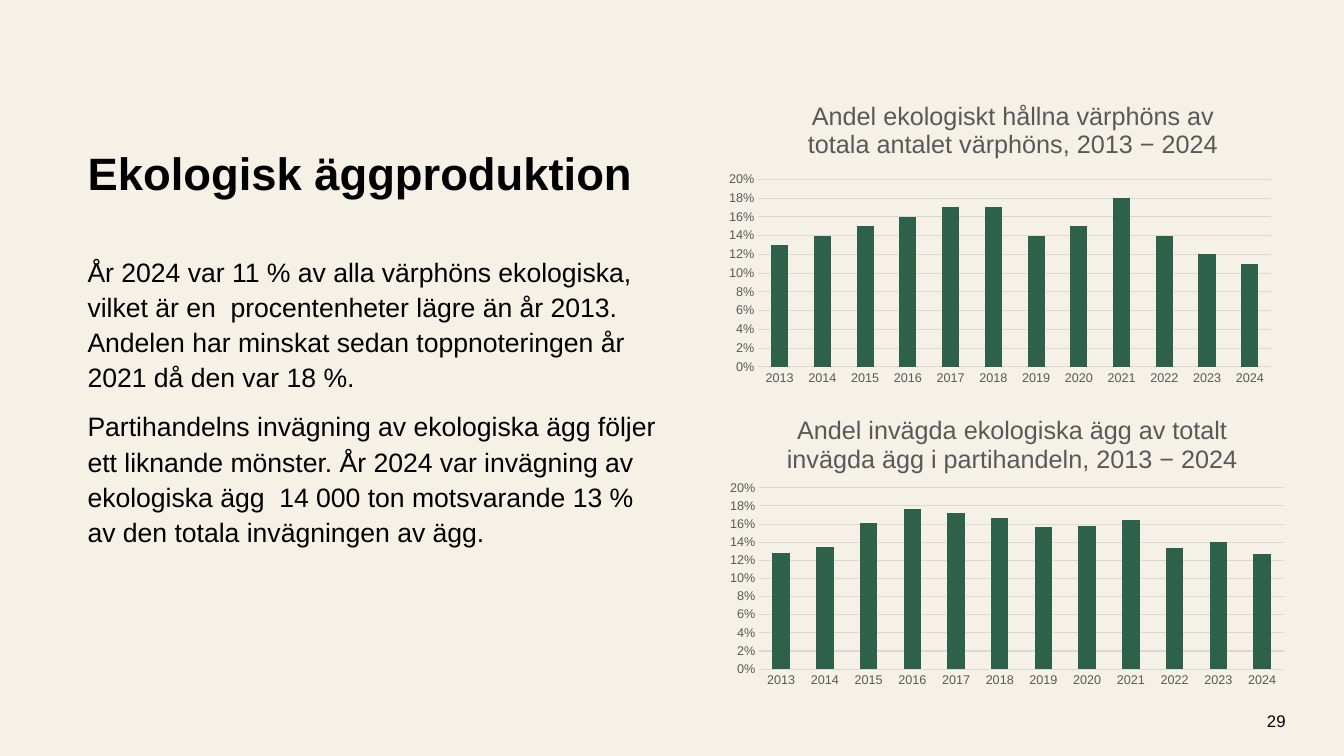
from dataclasses import dataclass

from lxml import etree
from pptx import Presentation
from pptx.chart.data import CategoryChartData
from pptx.dml.color import RGBColor
from pptx.enum import chart as ce, text as te
from pptx.util import Inches, Pt

INK, GREY, RULE, GREEN, SAND = "000000", "595959", "D9D9D9", "2E614C", "F5F1E7"
YEARS = [str(year) for year in range(2013, 2025)]


@dataclass
class Graph:
    title: str
    top: float
    width: float
    spot: dict[str, float]
    plot: dict[str, float]
    vals: list[float]


GRAPHS = [
    Graph("Andel ekologiskt hållna värphöns av totala antalet värphöns, 2013 − 2024",
          0.88, 5.59, dict(x=0.15, y=0.02), dict(x=0.07, y=0.3, w=0.91, h=0.62),
          [0.13, 0.14, 0.15, 0.16, 0.17, 0.17, 0.14, 0.15, 0.18, 0.14, 0.12, 0.11]),
    Graph("Andel invägda ekologiska ägg av totalt invägda ägg i partihandeln, 2013 − 2024",
          3.88, 5.72, dict(x=0.11, y=0.06), dict(x=0.07, y=0.32, w=0.91, h=0.6),
          [0.128, 0.135, 0.161, 0.177, 0.172, 0.167,
           0.157, 0.158, 0.165, 0.134, 0.14, 0.127]),
]

BODY = [
    "År 2024 var 11 % av alla värphöns ekologiska, vilket är en  procentenheter "
    "lägre än år 2013. Andelen har minskat sedan toppnoteringen år 2021 då den "
    "var 18 %.",
    "Partihandelns invägning av ekologiska ägg följer ett liknande mönster. "
    "År 2024 var invägning av ekologiska ägg  14 000 ton motsvarande 13 % av "
    "den totala invägningen av ägg.",
]


def color(code: str) -> RGBColor:
    return RGBColor.from_string(code)


def put(item, **vals) -> None:
    """Set each named value as an attribute of the item."""
    for name, val in vals.items():
        setattr(item, name, val)


def style(font, size: float, code: str, bold: bool = False) -> None:
    put(font, name="Arial", size=Pt(size), bold=bold)
    font.color.rgb = color(code)


def rule(line) -> None:
    line.color.rgb = color(RULE)
    line.width = Pt(0.75)


def place(shape, left: float, top: float, width: float, height: float) -> None:
    put(shape, left=Inches(left), top=Inches(top),
        width=Inches(width), height=Inches(height))


def write(shape, lines: list[str], size: float, anchor, bold: bool = False, **form) -> None:
    frame = shape.text_frame
    put(frame, word_wrap=True, auto_size=te.MSO_AUTO_SIZE.NONE, vertical_anchor=anchor)
    frame.text = "\n".join(lines)
    for i, para in enumerate(frame.paragraphs):
        put(para, space_before=Pt(10 if i else 0), **form)
        style(para.font, size, INK, bold)


def arrange(node, index: int, spot: dict[str, float]) -> None:
    """Give a chart part a manual layout in fractions of the chart."""
    space = "{http://schemas.openxmlformats.org/drawingml/2006/chart}"
    for old in node.findall(space + "layout"):
        node.remove(old)
    layout = etree.Element(space + "layout")
    manual = etree.SubElement(layout, space + "manualLayout")
    parts = {"layoutTarget": "inner"} if "w" in spot else {}
    parts |= {"xMode": "edge", "yMode": "edge"} | spot
    for name, val in parts.items():
        etree.SubElement(manual, space + name, val=str(val))
    node.insert(index, layout)


def draw(slide, graph: Graph) -> None:
    data = CategoryChartData(number_format="0%")
    data.categories = YEARS
    data.add_series("Series 1", graph.vals)
    chart = slide.shapes.add_chart(
        ce.XL_CHART_TYPE.COLUMN_CLUSTERED, Inches(7.13), Inches(graph.top),
        Inches(graph.width), Inches(3), data).chart
    style(chart.font, 10, INK)
    put(chart, has_legend=False, has_title=True)

    title = chart.chart_title
    title.include_in_layout = False
    title.text_frame.text = graph.title
    style(title.text_frame.paragraphs[0].runs[0].font, 18, GREY)
    arrange(title._element, 1, graph.spot)
    arrange(chart._chartSpace.chart.plotArea, 0, graph.plot)

    bars = chart.plots[0]
    put(bars, gap_width=150, overlap=-27, vary_by_categories=False)
    fill = bars.series[0].format.fill
    fill.solid()
    fill.fore_color.rgb = color(GREEN)

    cats, scale = chart.category_axis, chart.value_axis
    for axis in (cats, scale):
        put(axis, major_tick_mark=ce.XL_TICK_MARK.NONE, minor_tick_mark=ce.XL_TICK_MARK.NONE)
        style(axis.tick_labels.font, 9, GREY)
    rule(cats.format.line)
    put(scale, minimum_scale=0, maximum_scale=0.2, major_unit=0.02, has_major_gridlines=True)
    put(scale.tick_labels, number_format="0%", number_format_is_linked=False)
    scale.format.line.fill.background()
    rule(scale.major_gridlines.format.line)


def main() -> None:
    deck = Presentation()
    put(deck, slide_width=Inches(13.33), slide_height=Inches(7.5))
    slide = deck.slides.add_slide(deck.slide_layouts[5])
    back = slide.background.fill
    back.solid()
    back.fore_color.rgb = color(SAND)

    top, left = te.MSO_ANCHOR.TOP, te.PP_ALIGN.LEFT
    title = slide.shapes.title
    place(title, 0.77, 1.45, 5.72, 0.8)
    write(title, ["Ekologisk äggproduktion"], 32.4, top, True,
          line_spacing=0.9, alignment=left)

    body = slide.shapes.add_textbox(0, 0, 0, 0)
    place(body, 0.77, 2.46, 5.93, 3.86)
    write(body, BODY, 19, top, line_spacing=1.1, alignment=left)

    for graph in GRAPHS:
        draw(slide, graph)

    page = slide.shapes.add_textbox(0, 0, 0, 0)
    place(page, 11.69, 6.95, 1.16, 0.4)
    write(page, ["29"], 12, te.MSO_ANCHOR.MIDDLE, alignment=te.PP_ALIGN.RIGHT)
    deck.save("out.pptx")


if __name__ == "__main__":
    main()
